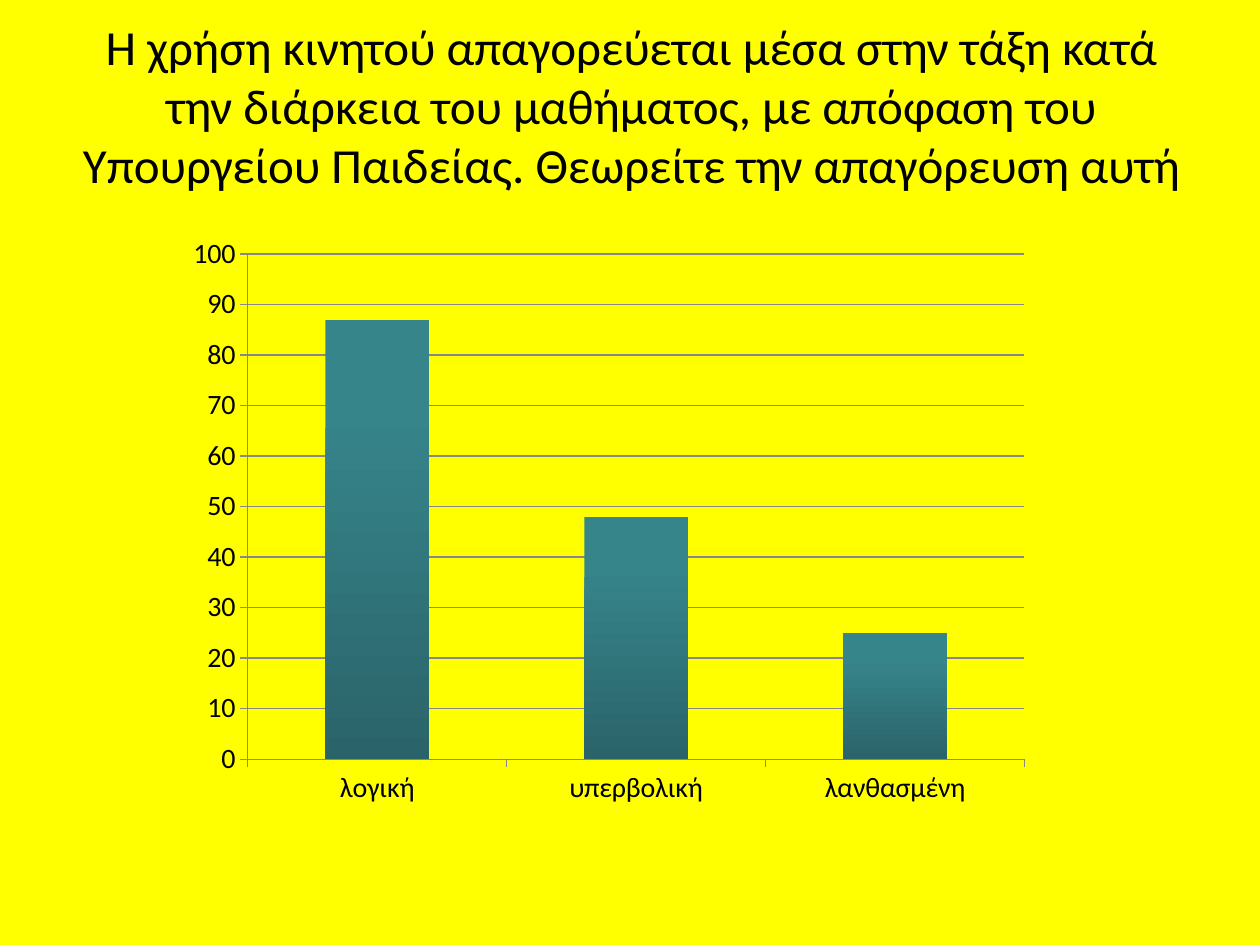
from lxml import etree
from pptx import Presentation
from pptx.chart.data import CategoryChartData
from pptx.dml.color import RGBColor
from pptx.enum.chart import XL_CHART_TYPE, XL_TICK_MARK
from pptx.enum.text import MSO_ANCHOR, MSO_AUTO_SIZE, PP_ALIGN
from pptx.oxml.ns import qn
from pptx.util import Inches, Pt

COLUMN_CLUSTERED = XL_CHART_TYPE.COLUMN_CLUSTERED
TICK_OUTSIDE = XL_TICK_MARK.OUTSIDE
MIDDLE = MSO_ANCHOR.MIDDLE
NO_AUTOFIT = MSO_AUTO_SIZE.NONE
CENTER = PP_ALIGN.CENTER


class Theme:
    font = "Calibri"
    background = RGBColor(0xFF, 0xFF, 0x00)
    text = RGBColor(0x00, 0x00, 0x00)
    axis = RGBColor(0x87, 0x87, 0x87)
    bar_top = RGBColor(0x36, 0x85, 0x8B)
    bar_bottom = RGBColor(0x2A, 0x64, 0x6A)
    title_size = Pt(28)
    chart_size = Pt(16)
    line_width = Pt(0.75)


def style_font(font, size):
    font.name = Theme.font
    font.size = size
    font.color.rgb = Theme.text
    font.bold = False


def set_plot_area(chart, left, top, width, height):
    """Fix the inner plot area, in fractions of the chart frame."""
    plot_area = chart.plots[0]._element.getparent()
    layout = plot_area.find(qn("c:layout"))
    if layout is None:
        layout = etree.Element(qn("c:layout"))
        plot_area.insert(0, layout)
    manual = etree.SubElement(layout, qn("c:manualLayout"))
    settings = {"layoutTarget": "inner", "xMode": "edge", "yMode": "edge",
                "x": left, "y": top, "w": width, "h": height}
    for name, value in settings.items():
        etree.SubElement(manual, qn(f"c:{name}")).set("val", str(value))


presentation = Presentation()
presentation.slide_width = Inches(10)
presentation.slide_height = Inches(7.5)
slide = presentation.slides.add_slide(presentation.slide_layouts[5])
slide.background.fill.solid()
slide.background.fill.fore_color.rgb = Theme.background

# Question
title = slide.shapes.title
title.left, title.top = Inches(0.51), Inches(0.21)
title.width, title.height = Inches(9), Inches(1.25)
title.text_frame.word_wrap = True
title.text_frame.auto_size = NO_AUTOFIT
title.text_frame.vertical_anchor = MIDDLE
paragraph = title.text_frame.paragraphs[0]
paragraph.alignment = CENTER
run = paragraph.add_run()
run.text = ("Η χρήση κινητού απαγορεύεται μέσα στην τάξη κατά την διάρκεια του "
            "μαθήματος, με απόφαση του Υπουργείου Παιδείας. "
            "Θεωρείτε την απαγόρευση αυτή")
style_font(run.font, Theme.title_size)

# Answers
chart_data = CategoryChartData()
chart_data.categories = ["λογική", "υπερβολική", "λανθασμένη"]
chart_data.add_series("Series 1", [87, 48, 25])
chart = slide.shapes.add_chart(
    COLUMN_CLUSTERED, Inches(0.59), Inches(1.7), Inches(9), Inches(4.95), chart_data
).chart
chart.has_title = False
chart.has_legend = False
style_font(chart.font, Theme.chart_size)
set_plot_area(chart, 0.153, 0.064, 0.685, 0.81)

value_axis = chart.value_axis
value_axis.minimum_scale = 0
value_axis.maximum_scale = 100
value_axis.major_unit = 10
value_axis.has_major_gridlines = True
axes = [chart.category_axis, value_axis]
for axis in axes:
    axis.major_tick_mark = TICK_OUTSIDE
for lines in [*axes, value_axis.major_gridlines]:
    lines.format.line.color.rgb = Theme.axis
    lines.format.line.width = Theme.line_width

plot = chart.plots[0]
plot.gap_width = 150
plot.vary_by_categories = False
bar_fill = plot.series[0].format.fill
bar_fill.gradient()
bar_fill.gradient_angle = 270
for stop, color, position in zip(bar_fill.gradient_stops,
                                 [Theme.bar_top, Theme.bar_bottom], [0.2, 1]):
    stop.color.rgb = color
    stop.position = position

presentation.save("out.pptx")
